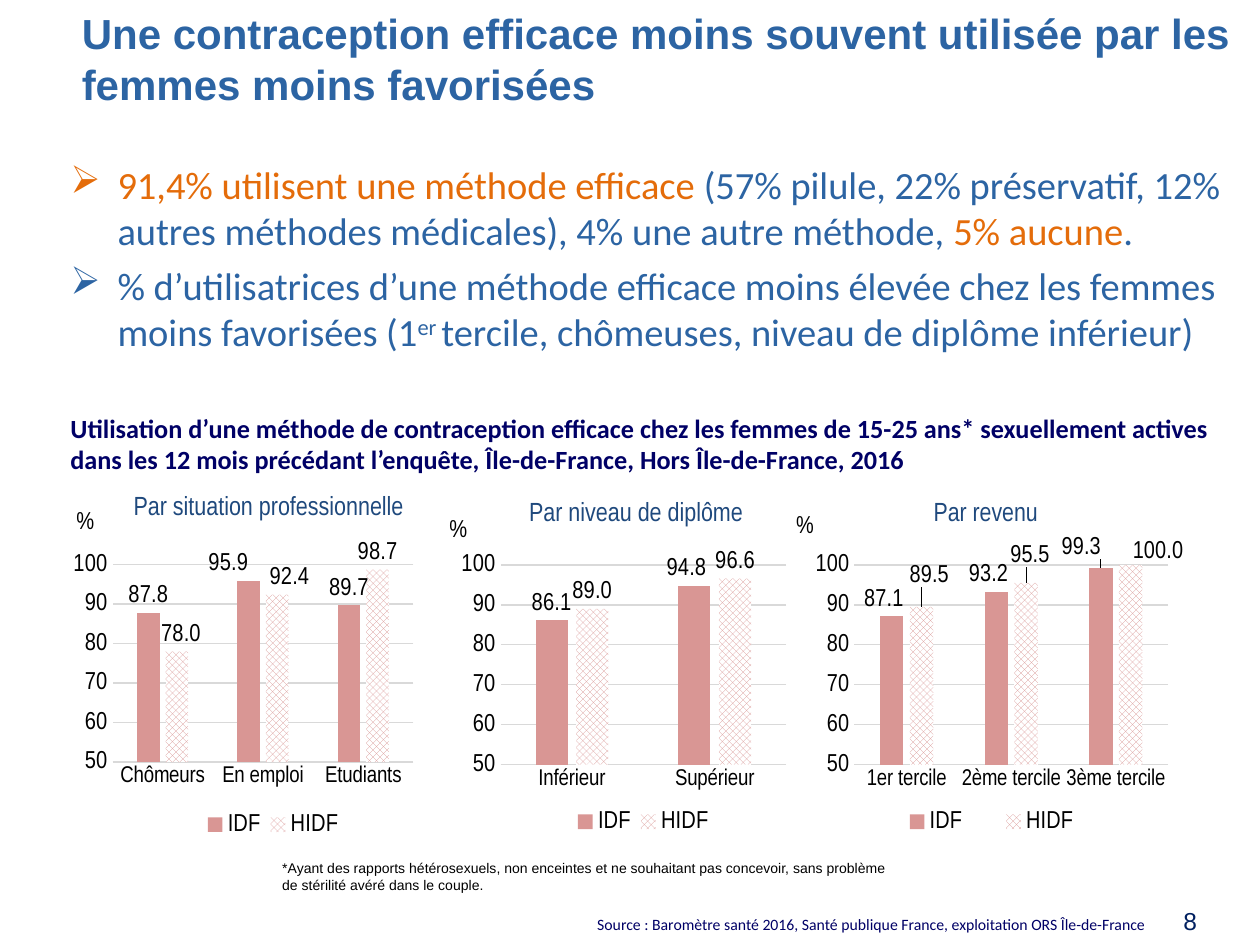
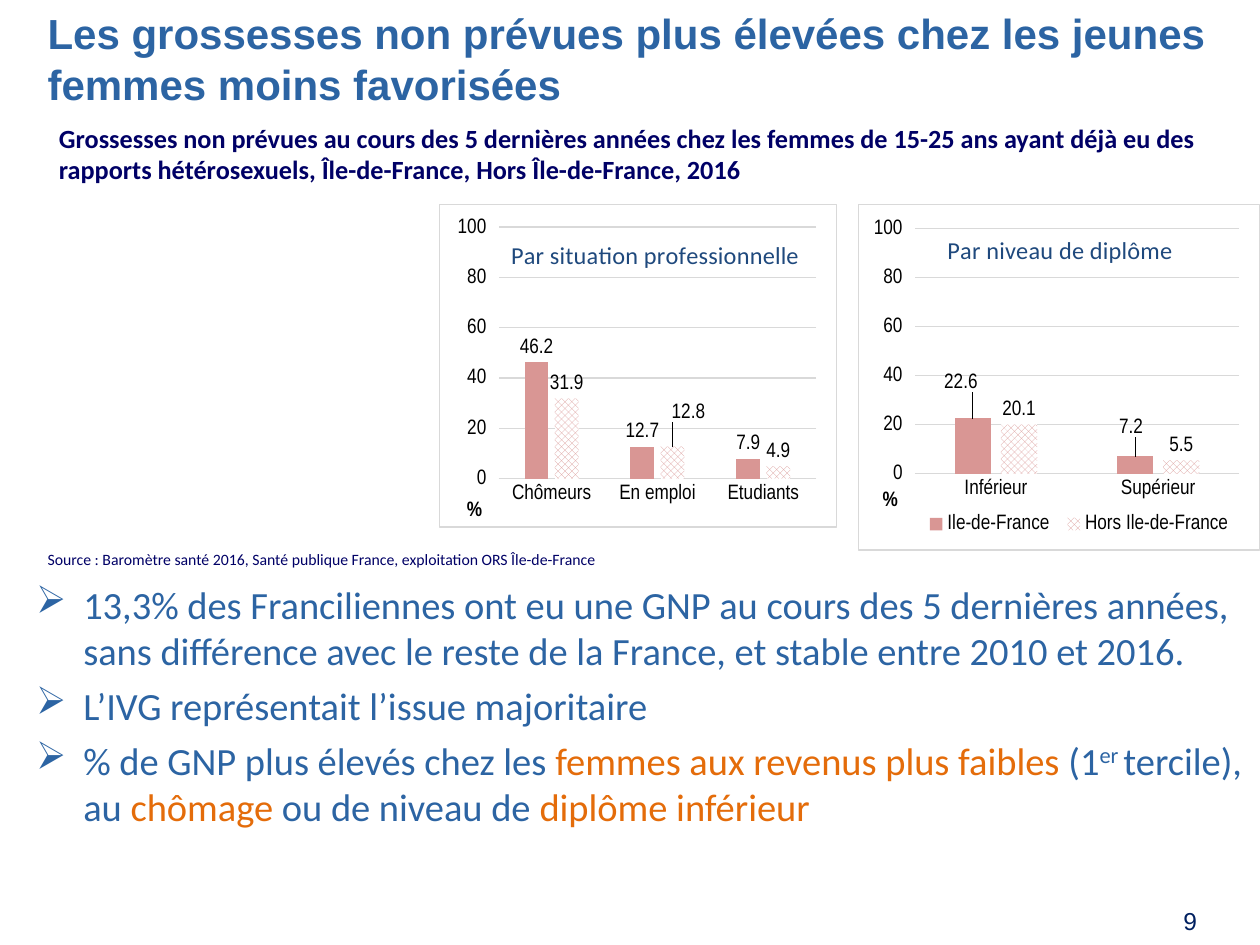
from dataclasses import dataclass, field

from pptx import Presentation
from pptx import util as u
from pptx.chart import data as chart_data
from pptx.dml.color import RGBColor
from pptx.enum import chart as charts
from pptx.enum import dml, text
from pptx.oxml import parse_xml
from pptx.oxml.ns import nsdecls, qn


def colour(code):
    return RGBColor.from_string(code)


@dataclass
class Theme:
    white: str = "FFFFFF"
    grid: str = "D9D9D9"
    bar: str = "D99694"
    title: dict = field(default_factory=lambda: dict(
        name="Arial", size=u.Pt(24), bold=True, color="2C64A3"))
    body: dict = field(default_factory=lambda: dict(
        name="Calibri", size=u.Pt(22), color="2C64A3"))
    accent: dict = field(default_factory=lambda: dict(color="E46C0A"))
    heading: dict = field(default_factory=lambda: dict(
        name="Calibri", size=u.Pt(15), bold=True, color="000066"))
    source: dict = field(default_factory=lambda: dict(
        name="Calibri", size=u.Pt(9), color="000066"))
    note: dict = field(default_factory=lambda: dict(
        name="Arial", size=u.Pt(8), color="000000"))
    number: dict = field(default_factory=lambda: dict(
        name="Arial", size=u.Pt(14), color="002060"))
    open_chart: dict = field(default_factory=lambda: dict(
        font=dict(name="Arial Narrow", size=u.Pt(14), bold=False, color="000000"),
        category=dict(size=u.Pt(13)),
        title=dict(name="Arial Narrow", size=u.Pt(15), bold=False, color="1F497D"),
        unit=dict(bold=False), framed=False, tick=charts.XL_TICK_MARK.NONE,
        scale=dict(minimum_scale=50, maximum_scale=100, major_unit=10)))
    framed_chart: dict = field(default_factory=lambda: dict(
        font=dict(name="Arial Narrow", size=u.Pt(12), bold=False, color="000000"),
        category={},
        title=dict(name="Calibri", size=u.Pt(14), bold=False, color="1F497D"),
        unit=dict(bold=True), framed=True, tick=charts.XL_TICK_MARK.OUTSIDE,
        scale=dict(minimum_scale=0, maximum_scale=100, major_unit=20)))


THEME = Theme()
SOURCE = "Source : Baromètre santé 2016, Santé publique France, exploitation ORS Île-de-France"
BY_JOB = "Par situation professionnelle"
BY_DIPLOMA = "Par niveau de diplôme"
JOBS = ["Chômeurs", "En emploi", "Etudiants"]
DIPLOMAS = ["Inférieur", "Supérieur"]
SUPERSCRIPT = {"baseline": "30000"}


def set_values(target, values):
    for name, value in values.items():
        setattr(target, name, value)


def set_font(font, values):
    for name, value in values.items():
        if name == "color":
            font.color.rgb = colour(value)
        elif name != "baseline":
            setattr(font, name, value)


def add_span(para, words, values):
    span = para.add_run()
    span.text = words
    set_font(span.font, values)
    if "baseline" in values:
        span._r.get_or_add_rPr().set("baseline", values["baseline"])


def add_box(page, place, **frame_values):
    box = page.shapes.add_textbox(*map(u.Cm, place))
    set_values(box.text_frame, dict(word_wrap=True, **frame_values))
    return box.text_frame


def add_text(page, place, words, values, align=text.PP_ALIGN.LEFT, **frame_values):
    para = add_box(page, place, **frame_values).paragraphs[0]
    para.alignment = align
    add_span(para, words, values)


def add_bullets(page, place, items):
    frame = add_box(page, place, margin_top=u.Cm(0.2))
    for index, spans in enumerate(items):
        para = frame.add_paragraph() if index else frame.paragraphs[0]
        properties = para._p.get_or_add_pPr()
        properties.set("marL", str(u.Cm(0.95)))
        properties.set("indent", str(-u.Cm(0.95)))
        properties.append(parse_xml(f'<a:buChar {nsdecls("a")} char="➢"/>'))
        if index:
            para.space_before = u.Pt(5)
        for words, values in spans:
            add_span(para, words, {**THEME.body, **values})


def set_layout(parent, modes="", target="", **sizes):
    for old in parent.findall(qn("c:layout")):
        parent.remove(old)
    inner = '<c:layoutTarget val="inner"/>' if target else ""
    edges = "".join(f'<c:{side}Mode val="edge"/>' for side in modes)
    values = "".join(f'<c:{side} val="{size}"/>' for side, size in sizes.items())
    layout = parse_xml(f'<c:layout {nsdecls("c")}><c:manualLayout>{inner}{edges}{values}'
                       "</c:manualLayout></c:layout>")
    before = [child for child in parent
              if child.tag in (qn("c:tx"), qn("c:legendPos"), qn("c:idx"))]
    if before:
        before[-1].addnext(layout)
    else:
        parent.insert(0, layout)


def set_chart_title(title, words, values, place):
    para = title.text_frame.paragraphs[0]
    add_span(para, words, values)
    set_layout(title._element, "xy", x=place[0], y=place[1])


def set_frame(chart, framed):
    if framed:
        inside = (f'<a:solidFill><a:srgbClr val="{THEME.white}"/></a:solidFill>'
                  f'<a:ln w="9525"><a:solidFill><a:srgbClr val="{THEME.grid}"/></a:solidFill></a:ln>')
    else:
        inside = "<a:noFill/><a:ln><a:noFill/></a:ln>"
    area = parse_xml(f'<c:spPr {nsdecls("c", "a")}>{inside}</c:spPr>')
    chart._chartSpace.find(qn("c:chart")).addnext(area)


def set_axes(chart, look, unit_at):
    category, value = chart.category_axis, chart.value_axis
    category.major_tick_mark = charts.XL_TICK_MARK.NONE
    set_font(category.tick_labels.font, {**look["font"], **look["category"]})
    set_chart_title(category.axis_title, "%", {**look["font"], **look["unit"]}, unit_at)
    set_values(value, dict(look["scale"], major_tick_mark=look["tick"], has_major_gridlines=True))
    set_values(value.tick_labels, dict(number_format="0", number_format_is_linked=False))
    set_font(value.tick_labels.font, look["font"])
    value.format.line.fill.background()
    for line in (category.format.line, value.major_gridlines.format.line):
        line.color.rgb = colour(THEME.grid)
        line.width = u.Pt(0.75)


def set_series(series, patterned, look, moves):
    fill = series.format.fill
    if patterned:
        fill.patterned()
        fill.pattern = dml.MSO_PATTERN.LARGE_CHECKER_BOARD
        fill.fore_color.rgb = colour(THEME.bar)
        fill.back_color.rgb = colour(THEME.white)
    else:
        fill.solid()
        fill.fore_color.rgb = colour(THEME.bar)
    labels = series.data_labels
    outside = charts.XL_LABEL_POSITION.OUTSIDE_END
    set_values(labels, dict(show_value=True, number_format="0.0",
                            number_format_is_linked=False, position=outside))
    set_font(labels.font, look["font"])
    for index, (right, down) in moves.items():
        label = series.points[index].data_label
        set_font(label.font, look["font"])
        label.position = outside
        element = series._element.xpath(f'c:dLbls/c:dLbl[c:idx/@val="{index}"]')[0]
        set_layout(element, x=right, y=down)


def add_column_chart(page, place, look, title, title_at, unit_at, plot, categories,
                     series, legend=None, moves=({}, {})):
    values = chart_data.CategoryChartData(number_format="0.0")
    values.categories = categories
    for name, numbers in series.items():
        values.add_series(name, numbers)
    chart = page.shapes.add_chart(
        charts.XL_CHART_TYPE.COLUMN_CLUSTERED, *map(u.Cm, place), values).chart
    set_font(chart.font, look["font"])
    set_frame(chart, look["framed"])
    set_chart_title(chart.chart_title, title, look["title"], title_at)
    set_axes(chart, look, unit_at)
    set_values(chart.plots[0], dict(gap_width=219, overlap=-27, vary_by_categories=False))
    for index, bars in enumerate(chart.plots[0].series):
        set_series(bars, index == 1, look, moves[index])
    chart.has_legend = legend is not None
    if legend:
        set_values(chart.legend, dict(position=charts.XL_LEGEND_POSITION.BOTTOM,
                                      include_in_layout=False))
        set_font(chart.legend.font, look["font"])
        set_layout(chart.legend._element, "xy", **dict(zip("xywh", legend)))
    plot_area = chart._chartSpace.find(qn("c:chart")).find(qn("c:plotArea"))
    set_layout(plot_area, "xy", "inner", **dict(zip("xywh", plot)))


def add_page(deck, number, title, title_left, heading, heading_place, source_place):
    page = deck.slides.add_slide(deck.slide_layouts[6])
    add_text(page, (19.1, 18.14, 5.28, 0.89), str(number), THEME.number, text.PP_ALIGN.RIGHT)
    add_text(page, (title_left, 0, 24, 2.34), title, THEME.title,
             vertical_anchor=text.MSO_ANCHOR.MIDDLE)
    add_text(page, (*heading_place, 23.52, 1.55), heading, THEME.heading)
    add_text(page, (*source_place, 11.91, 0.64), SOURCE, THEME.source)
    return page


def add_contraception_page(deck):
    page = add_page(
        deck, 8,
        "Une contraception efficace moins souvent utilisée par les femmes moins favorisées", 1.4,
        "Utilisation d’une méthode de contraception efficace chez les femmes de 15-25 ans* "
        "sexuellement actives dans les 12 mois précédant l’enquête, Île-de-France, "
        "Hors Île-de-France, 2016", (1.17, 8.18), (11.79, 18.31))
    add_bullets(page, (1.17, 3.05, 23.93, 4.27), [
        [("91,4% utilisent une méthode efficace ", THEME.accent),
         ("(57% pilule, 22% préservatif, 12% autres méthodes médicales), "
          "4% une autre méthode, ", {}),
         ("5% aucune", THEME.accent), (".", {})],
        [("% d’utilisatrices d’une méthode efficace moins élevée chez les femmes "
          "moins favorisées (1", {}),
         ("er ", SUPERSCRIPT), ("tercile, chômeuses, niveau de diplôme inférieur)", {})]])
    look = THEME.open_chart
    add_column_chart(
        page, (0.71, 9.35, 8.2, 8.13), look, BY_JOB, (0.23, 0.06), (0.09, 0.1),
        (0.19, 0.25, 0.74, 0.49), JOBS,
        {"IDF": (87.8, 95.9, 89.7), "HIDF": (78, 92.4, 98.7)}, (0.4, 0.85, 0.37, 0.09),
        ({1: (-0.05, 0)}, {0: (0.01, 0), 1: (0.03, 0)}))
    add_column_chart(
        page, (15.88, 9.88, 7.98, 7.19), look, "Par revenu", (0.36, 0.01), (0.01, 0.05),
        (0.17, 0.21, 0.8, 0.56), ["1er tercile", "2ème tercile", "3ème tercile"],
        {"IDF": (87.1, 93.2, 99.3), "HIDF": (89.5, 95.5, 100)}, (0.22, 0.88, 0.6, 0.1),
        ({0: (-0.02, 0), 1: (-0.02, 0), 2: (-0.05, -0.01)},
         {0: (0.02, -0.04), 1: (0.01, -0.03), 2: (0.07, 0.01)}))
    add_column_chart(
        page, (8.41, 9.88, 8, 7.19), look, BY_DIPLOMA, (0.27, 0.01), (0.07, 0.06),
        (0.21, 0.21, 0.72, 0.56), DIPLOMAS,
        {"IDF": (86.1, 94.8), "HIDF": (89, 96.6)}, (0.38, 0.88, 0.38, 0.1),
        ({1: (-0.02, 0)}, {}))
    add_text(page, (5.44, 17.2, 12.7, 0.94),
             "*Ayant des rapports hétérosexuels, non enceintes et ne souhaitant pas concevoir, "
             "sans problème de stérilité avéré dans le couple.", THEME.note)


def add_pregnancy_page(deck):
    page = add_page(
        deck, 9,
        "Les grossesses non prévues plus élevées chez les jeunes femmes moins favorisées", 0.71,
        "Grossesses non prévues au cours des 5 dernières années chez les femmes de 15-25 ans "
        "ayant déjà eu des rapports hétérosexuels, Île-de-France, Hors Île-de-France, 2016",
        (0.94, 2.34), (0.71, 10.95))
    add_bullets(page, (0.48, 11.51, 25.15, 7.34), [
        [("13,3% des Franciliennes ont eu une GNP au cours des 5 dernières années, sans "
          "différence avec le reste de la France, et stable entre 2010 et 2016.", {})],
        [("L’IVG représentait l’issue majoritaire", {})],
        [("% de GNP plus élevés chez les ", {}),
         ("femmes aux revenus plus faibles ", THEME.accent), ("(1", {}), ("er ", SUPERSCRIPT),
         ("tercile), au ", {}), ("chômage", THEME.accent), (" ou de niveau de ", {}),
         ("diplôme inférieur", THEME.accent)]])
    look = THEME.framed_chart
    add_column_chart(
        page, (8.84, 4.11, 8.03, 6.53), look, BY_JOB, (0.17, 0.09), (0.06, 0.9),
        (0.15, 0.07, 0.8, 0.78), JOBS,
        {"Series 1": (46.2, 12.7, 7.9), "Series 2": (31.9, 12.8, 4.9)},
        moves=({}, {1: (0.04, -0.06)}))
    add_column_chart(
        page, (17.3, 4.11, 8.1, 6.99), look, BY_DIPLOMA, (0.21, 0.07), (0.05, 0.81),
        (0.14, 0.07, 0.81, 0.71), DIPLOMAS,
        {"Ile-de-France": (22.6, 7.2), "Hors Ile-de-France": (20.1, 5.5)},
        (0.15, 0.88, 0.8, 0.09), ({0: (-0.03, -0.06), 1: (-0.01, -0.04)}, {}))


def main():
    deck = Presentation()
    set_values(deck, dict(slide_width=u.Cm(25.4), slide_height=u.Cm(19.05)))
    add_contraception_page(deck)
    add_pregnancy_page(deck)
    deck.save("out.pptx")


if __name__ == "__main__":
    main()
